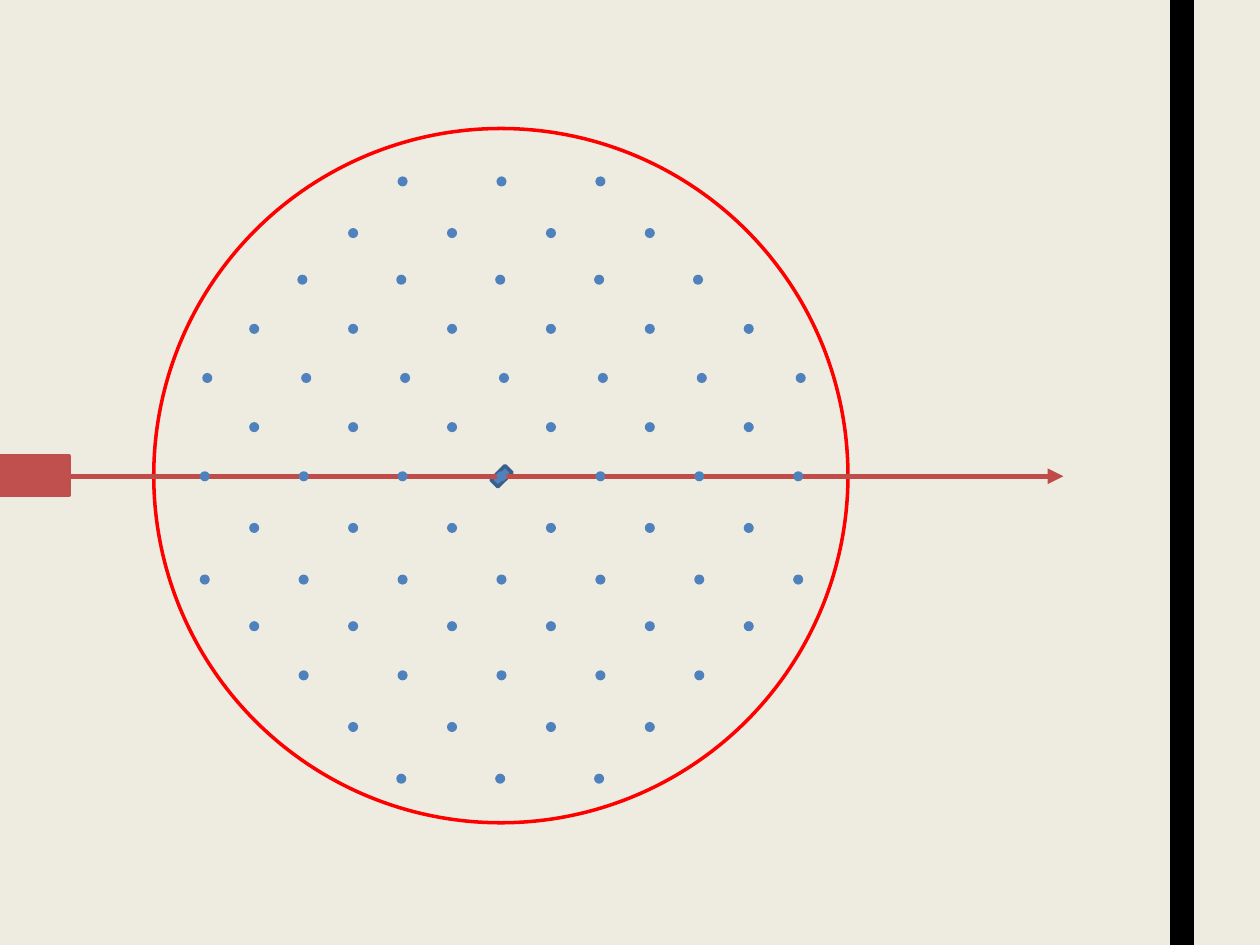
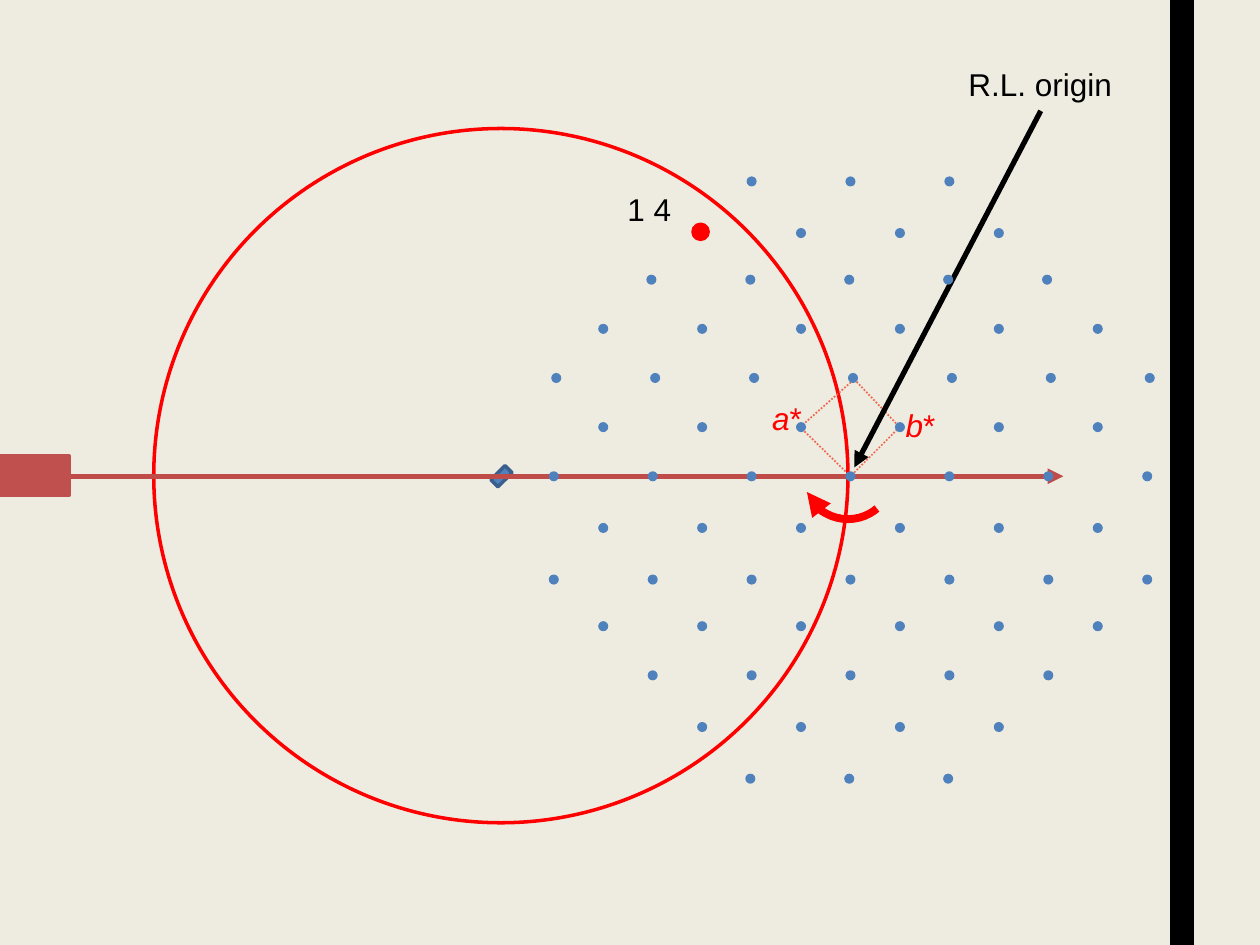
"""Draws a reciprocal lattice with its Ewald sphere in two steps."""
from dataclasses import dataclass
from itertools import pairwise

from lxml import etree
from pptx import Presentation
from pptx.dml.color import RGBColor
from pptx.enum.dml import MSO_LINE
from pptx.enum.shapes import MSO_CONNECTOR, MSO_SHAPE
from pptx.enum.text import MSO_AUTO_SIZE, PP_ALIGN
from pptx.oxml.ns import qn
from pptx.util import Inches, Pt

OVAL, RECTANGLE, ARC = MSO_SHAPE.OVAL, MSO_SHAPE.RECTANGLE, MSO_SHAPE.ARC
STRAIGHT = MSO_CONNECTOR.STRAIGHT
DOTTED = MSO_LINE.ROUND_DOT
FIT_SHAPE = MSO_AUTO_SIZE.SHAPE_TO_FIT_TEXT
LEFT, CENTER = PP_ALIGN.LEFT, PP_ALIGN.CENTER


@dataclass(frozen=True)
class Theme:
    """Colours, type and line widths shared by both slides."""

    paper: str = "EEECE1"
    ink: str = "000000"
    red: str = "FF0000"
    beam: str = "BF4C48"
    source: str = "C0504D"
    blue: str = "4F81BD"
    blue_edge: str = "3A5F8C"
    cell: str = "EE674C"
    font: str = "Arial"
    label_size: int = 18
    hairline: float = 1
    outline: float = 2
    arrow: float = 3
    turn: float = 4.5


THEME = Theme()
SLIDE_WIDTH, SLIDE_HEIGHT = 10, 7.5
SPHERE_BOX = (1.22, 1.02, 5.51, 5.51)
DETECTOR_BOX = (9.3, 0, 0.16, SLIDE_HEIGHT)
SOURCE_BOX = (0, 3.62, 0.55, 0.31)
SAMPLE_CENTER = (3.98, 3.78)
LATTICE_ORIGIN = (6.75, 3.78)
DOT = 0.08
PITCH = 4.71 / 6
LATTICE_ROWS = (
    (3, -2.34, 0), (4, -1.93, 0), (5, -1.56, -0.01), (6, -1.17, 0),
    (7, -0.78, 0.02), (6, -0.39, 0), (7, 0, 0), (6, 0.41, 0),
    (7, 0.82, 0), (6, 1.19, 0), (5, 1.58, 0), (4, 1.99, 0), (3, 2.4, -0.01),
)
CELL_CORNERS = ((0, 0), (-0.4, -0.39), (0.03, -0.77), (0.39, -0.39), (0, 0))


def color(value):
    """Turn a hex string into a colour."""
    return RGBColor.from_string(value)


def set_line(shape, value, width):
    """Give a shape's outline a colour and a width."""
    shape.line.color.rgb = color(value)
    shape.line.width = Pt(width)


def add_arrowhead(shape, end):
    """Put a triangle on the named end of a line."""
    outline = shape.line._get_or_add_ln()
    etree.SubElement(outline, qn(f"a:{end}"), type="triangle")


def add_form(shapes, kind, box, fill=None, edge=None, width=THEME.outline):
    """Add a flat preset shape in the given box."""
    form = shapes.add_shape(kind, *map(Inches, box))
    form.shadow.inherit = False
    if fill:
        form.fill.solid()
        form.fill.fore_color.rgb = color(fill)
    else:
        form.fill.background()
    if edge:
        set_line(form, edge, width)
    else:
        form.line.fill.background()
    return form


def add_line(shapes, start, end, value, width):
    """Add a flat straight line between two points."""
    line = shapes.add_connector(STRAIGHT, *map(Inches, (*start, *end)))
    etree.SubElement(line._element.spPr, qn("a:effectLst"))
    set_line(line, value, width)
    return line


def add_label(shapes, box, spans, value=THEME.ink, align=LEFT):
    """Add a one-line label from (text, italic) spans."""
    label = shapes.add_textbox(*map(Inches, box))
    frame = label.text_frame
    frame.word_wrap = False
    frame.auto_size = FIT_SHAPE
    para = frame.paragraphs[0]
    para.alignment = align
    for text, italic in spans:
        span = para.add_run()
        span.text = text
        span.font.name = THEME.font
        span.font.size = Pt(THEME.label_size)
        span.font.italic = italic
        span.font.color.rgb = color(value)


def centered_box(center, width, height):
    """Return the box of the given size around a point."""
    return center[0] - width / 2, center[1] - height / 2, width, height


def add_sample(shapes, center):
    """Add the small tilted crystal around its center."""
    box = centered_box(center, 0.08, 0.16)
    sample = add_form(shapes, RECTANGLE, box, THEME.blue, THEME.blue_edge)
    sample.rotation = 45


def add_beam(shapes, box, length):
    """Add the beam source in its box and the ray leaving its right side."""
    left, top, width, height = box
    start = left + width, SAMPLE_CENTER[1]
    ray = add_line(shapes, start, (start[0] + length, start[1]),
                   THEME.beam, THEME.arrow)
    add_arrowhead(ray, "tailEnd")
    add_form(shapes, RECTANGLE, box, THEME.source, THEME.source)


def add_setup(deck):
    """Add a slide with the sphere, detector, sample and beam."""
    page = deck.slides.add_slide(deck.slide_layouts[6])
    page.background.fill.solid()
    page.background.fill.fore_color.rgb = color(THEME.paper)
    add_form(page.shapes, OVAL, SPHERE_BOX, THEME.paper, THEME.red)
    add_form(page.shapes, RECTANGLE, DETECTOR_BOX, THEME.ink, THEME.ink)
    add_sample(page.shapes, SAMPLE_CENTER)
    add_beam(page.shapes, SOURCE_BOX, 7.89)
    return page.shapes


def add_lattice(shapes, origin):
    """Add the grouped lattice points around their origin."""
    dots = shapes.add_group_shape().shapes
    for count, rise, shift in LATTICE_ROWS:
        first = origin[0] + shift - (count - 1) / 2 * PITCH
        for column in range(count):
            center = first + column * PITCH, origin[1] + rise
            add_form(dots, OVAL, centered_box(center, DOT, DOT), THEME.blue)


def add_unit_cell(shapes, origin):
    """Add the dotted unit cell that starts at the lattice origin."""
    sides = shapes.add_group_shape().shapes
    corners = [(origin[0] + x, origin[1] + y) for x, y in CELL_CORNERS]
    for start, end in pairwise(corners):
        side = add_line(sides, start, end, THEME.cell, THEME.hairline)
        side.line.dash_style = DOTTED


def add_origin_callout(shapes, origin):
    """Name the lattice origin and point an arrow at it."""
    x, y = origin
    add_label(shapes, (x + 0.83, y - 3.31, 1.35, 0.4),
              [("R.L. origin", False)], align=CENTER)
    pointer = add_line(shapes, (x + 1.51, y - 2.9), (x + 0.03, y - 0.07),
                       THEME.ink, THEME.arrow)
    add_arrowhead(pointer, "tailEnd")


def add_reflection(shapes, center):
    """Add the highlighted reflection and its indices."""
    mark = shapes.add_group_shape().shapes
    add_form(mark, OVAL, centered_box(center, 0.12, 0.12),
             THEME.red, THEME.red)
    add_label(mark, (center[0] - 0.68, center[1] - 0.38, 0.55, 0.4),
              [("1 4", False)])


def add_turn(shapes, origin):
    """Add the curved arrow that turns the lattice about its origin."""
    box = centered_box((origin[0] - 0.02, origin[1]), 0.7, 0.68)
    turn = add_form(shapes, ARC, box, edge=THEME.red, width=THEME.turn)
    turn.adjustments[0] = 48 * 0.6
    turn.adjustments[1] = 159 * 0.6
    add_arrowhead(turn, "tailEnd")


def add_axis_labels(shapes, origin):
    """Name the two reciprocal axes beside the unit cell."""
    for axis, x, y in (("a", -0.72, -0.66), ("b", 0.34, -0.61)):
        add_label(shapes, (origin[0] + x, origin[1] + y, 0.44, 0.4),
                  [(axis, True), ("*", False)], THEME.red)


def add_centered_slide(deck):
    """Show the lattice centered on the sample."""
    add_lattice(add_setup(deck), SAMPLE_CENTER)


def add_shifted_slide(deck):
    """Show the lattice centered where the beam leaves the sphere."""
    shapes = add_setup(deck)
    add_unit_cell(shapes, LATTICE_ORIGIN)
    add_origin_callout(shapes, LATTICE_ORIGIN)
    add_lattice(shapes, LATTICE_ORIGIN)
    add_reflection(shapes, (5.56, 1.84))
    add_turn(shapes, LATTICE_ORIGIN)
    add_axis_labels(shapes, LATTICE_ORIGIN)


def main():
    """Build and save the deck."""
    deck = Presentation()
    deck.slide_width = Inches(SLIDE_WIDTH)
    deck.slide_height = Inches(SLIDE_HEIGHT)
    add_centered_slide(deck)
    add_shifted_slide(deck)
    deck.save("out.pptx")


if __name__ == "__main__":
    main()
